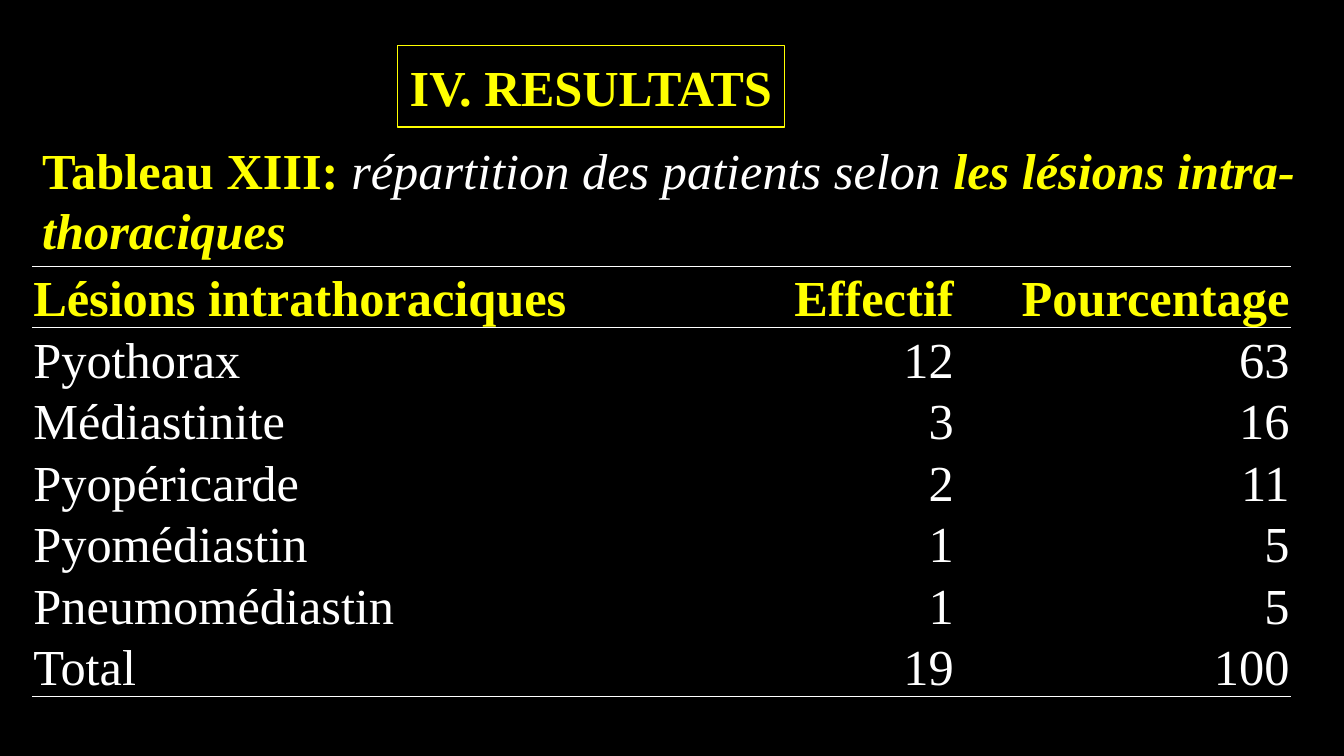
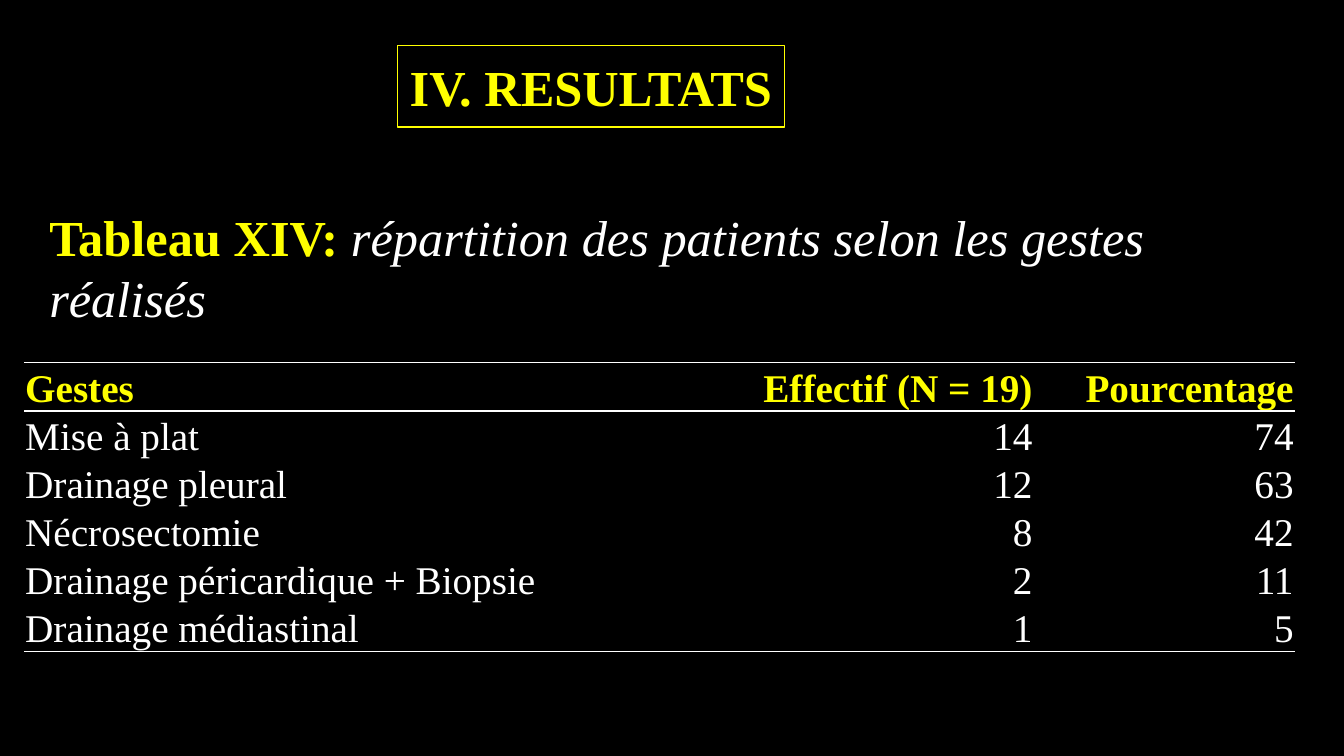
from dataclasses import dataclass

from lxml import etree
from pptx import Presentation
from pptx.dml.color import RGBColor
from pptx.enum.text import MSO_ANCHOR, MSO_AUTO_SIZE, PP_ALIGN
from pptx.oxml.ns import qn
from pptx.util import Inches, Pt

LEFT, CENTER, RIGHT = PP_ALIGN.LEFT, PP_ALIGN.CENTER, PP_ALIGN.RIGHT
MIDDLE, BOTTOM = MSO_ANCHOR.MIDDLE, MSO_ANCHOR.BOTTOM
NO_AUTOFIT = MSO_AUTO_SIZE.NONE
TITLE_ONLY = 5
NO_STYLE_NO_GRID = "{2D5ABB26-0587-4C30-8999-92F81FD0307C}"


@dataclass(frozen=True)
class Theme:
    font: str = "Times New Roman"
    background: str = "000000"
    accent: str = "FFFF00"
    text: str = "FFFFFF"
    heading: int = 36
    line: int = 1


T = Theme()

# Content: caption runs are (text, accent colour, bold, italic)
TITLE = "IV. RESULTATS"
TITLE_BOX = (3.94, 0.45, 3.84, 0.81)
SLIDES = [
    {
        "caption": [
            ("Tableau XIII: ", True, True, False),
            ("répartition des patients selon ", False, False, True),
            ("les lésions intra-thoraciques", True, True, True),
        ],
        "caption_box": (0.32, 1.33, 12.7, 1.31),
        "table_at": (0.32, 2.64),
        "columns": (5.82, 3.33, 3.33),
        "row_height": 0.61,
        "size": 36,
        "rows": [
            ("Lésions intrathoraciques", "Effectif", "Pourcentage"),
            ("Pyothorax", "12", "63"),
            ("Médiastinite", "3", "16"),
            ("Pyopéricarde", "2", "11"),
            ("Pyomédiastin", "1", "5"),
            ("Pneumomédiastin", "1", "5"),
            ("Total", "19", "100"),
        ],
    },
    {
        "caption": [
            ("Tableau XIV: ", True, True, False),
            ("répartition des patients selon les gestes réalisés",
             False, False, True),
        ],
        "caption_box": (0.39, 2, 11.15, 1.31),
        "table_at": (0.24, 3.6),
        "columns": (5.48, 4.53, 2.59),
        "row_height": 0.477,
        "size": 28,
        "rows": [
            ("Gestes", "Effectif (N = 19)", "Pourcentage"),
            ("Mise à plat", "14", "74"),
            ("Drainage pleural", "12", "63"),
            ("Nécrosectomie", "8", "42"),
            ("Drainage péricardique + Biopsie", "2", "11"),
            ("Drainage médiastinal", "1", "5"),
        ],
    },
]


def write(p, text, size=T.heading, accent=False, bold=False, italic=False):
    """Add one formatted run to a paragraph."""
    r = p.add_run()
    r.text = text
    r.font.name = T.font
    r.font.size = Pt(size)
    r.font.bold = bold
    r.font.italic = italic
    r.font.color.rgb = RGBColor.from_string(T.accent if accent else T.text)


def add_border(cell, side):
    """Rule the top ("T") or bottom ("B") edge of a cell."""
    tc_pr = cell._tc.get_or_add_tcPr()
    ln = etree.SubElement(tc_pr, qn(f"a:ln{side}"), w=str(Pt(T.line)))
    fill = etree.SubElement(ln, qn("a:solidFill"))
    etree.SubElement(fill, qn("a:srgbClr"), val=T.text)


def add_title(s):
    title = s.shapes.title
    title.left, title.top, title.width, title.height = map(Inches, TITLE_BOX)
    title.line.color.rgb = RGBColor.from_string(T.accent)
    title.line.width = Pt(T.line)
    tf = title.text_frame
    tf.auto_size = NO_AUTOFIT
    tf.word_wrap = True
    tf.vertical_anchor = MIDDLE
    p = tf.paragraphs[0]
    p.alignment = CENTER
    write(p, TITLE, accent=True, bold=True)


def add_caption(s, box, runs):
    tf = s.shapes.add_textbox(*map(Inches, box)).text_frame
    tf.word_wrap = True
    for text, accent, bold, italic in runs:
        write(tf.paragraphs[0], text, accent=accent, bold=bold, italic=italic)


def add_results(s, at, columns, row_height, size, rows):
    width, height = sum(columns), row_height * len(rows)
    frame = s.shapes.add_table(len(rows), len(columns),
                               *map(Inches, (*at, width, height)))
    table = frame.table
    table.first_row = table.horz_banding = False
    table._tbl.tblPr.find(qn("a:tableStyleId")).text = NO_STYLE_NO_GRID
    for column, w in zip(table.columns, columns):
        column.width = Inches(w)
    for i, values in enumerate(rows):
        table.rows[i].height = Inches(row_height)
        header = i == 0
        for j, value in enumerate(values):
            cell = table.cell(i, j)
            cell.vertical_anchor = BOTTOM
            cell.margin_left = cell.margin_right = cell.margin_top = Inches(0.01)
            cell.margin_bottom = 0
            p = cell.text_frame.paragraphs[0]
            p.alignment = RIGHT if j else LEFT
            write(p, value, size=size, accent=header, bold=header)
            # Rules above and below the header, and under the last row
            if header:
                add_border(cell, "T")
            if header or i == len(rows) - 1:
                add_border(cell, "B")
            cell.fill.background()


def main():
    prs = Presentation()
    prs.slide_width, prs.slide_height = Inches(13.33), Inches(7.5)
    background = prs.slide_master.background.fill
    background.solid()
    background.fore_color.rgb = RGBColor.from_string(T.background)
    for data in SLIDES:
        s = prs.slides.add_slide(prs.slide_layouts[TITLE_ONLY])
        add_title(s)
        add_results(s, data["table_at"], data["columns"], data["row_height"],
                    data["size"], data["rows"])
        add_caption(s, data["caption_box"], data["caption"])
    prs.save("out.pptx")


if __name__ == "__main__":
    main()
